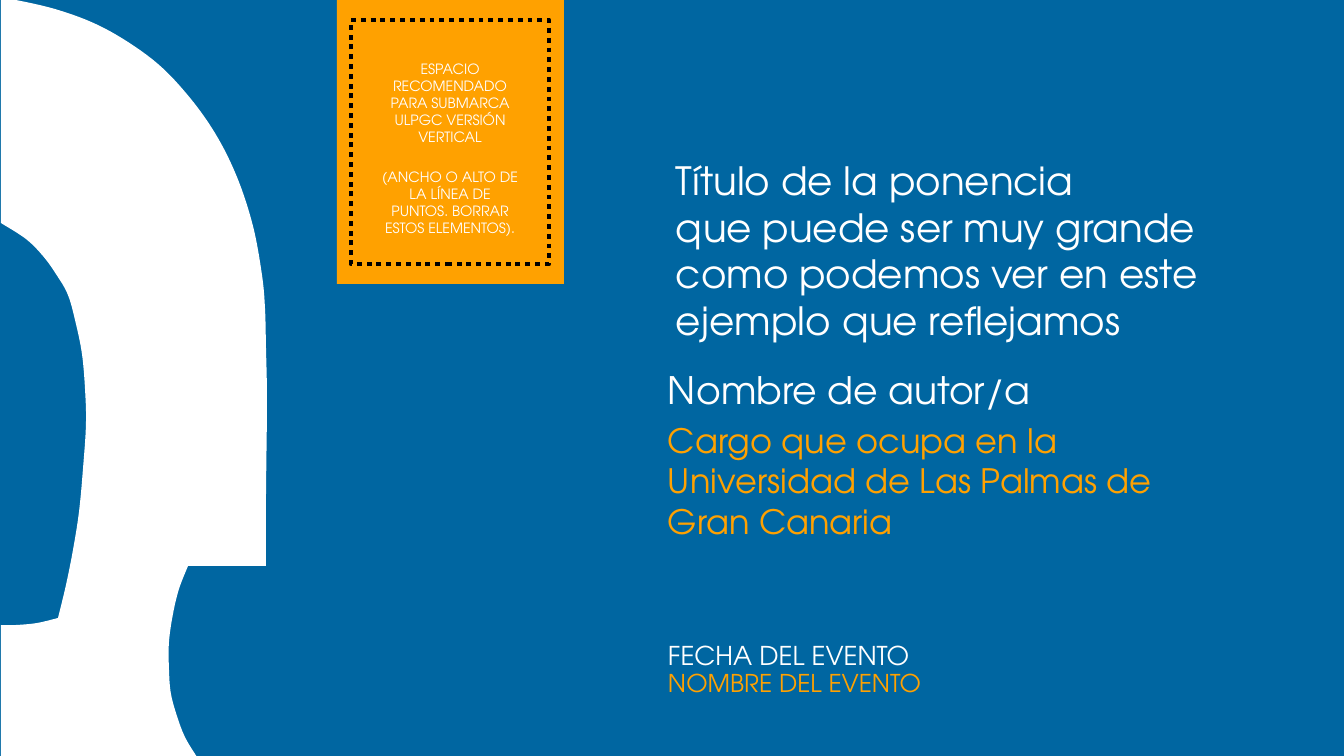
"""Build a cover slide for a university talk."""
from pptx import Presentation, util as u
from pptx.dml.color import RGBColor
from pptx.enum import dml, shapes, text

PX = 914400 / 50.4
FONT = "TeX Gyre Adventor"
BLUE = RGBColor(0x00, 0x66, 0xA1)
GOLD = RGBColor(0xFF, 0xA1, 0x00)
WHITE = RGBColor(0xFF, 0xFF, 0xFF)
BLACK = RGBColor(0x00, 0x00, 0x00)

BROW = [(1, -3), (55, 9), (104, 28), (152, 59), (186, 93), (215, 133),
        (237, 177), (253, 226), (262, 275), (265, 308), (266, 347),
        (267, 402), (266, 497), (266, 566)]
NECK = [(188, 566), (179, 589), (173, 614), (169, 642), (169, 669),
        (171, 694), (178, 719), (186, 739), (199, 760)]
BASE = [(1, 760), (1, 625)]
CHIN = [(1, 625), (16, 625), (37, 623), (58, 618)]
INNER = [(58, 618), (66, 585), (73, 550), (79, 512), (83, 469), (86, 424),
         (85, 388), (82, 354), (76, 324), (68, 295), (56, 274), (43, 256),
         (26, 239), (1, 223)]


def emu(n):
    return u.Emu(round(n * PX))


def blend(a, b, c, d, t):
    return (2 * b + (c - a) * t + (2 * a - 5 * b + 4 * c - d) * t ** 2
            + (3 * b - a - 3 * c + d) * t ** 3) / 2


def curve(knots, steps=8):
    ends = [knots[0], *knots, knots[-1]]
    dots = [knots[0]]
    for quad in zip(ends, ends[1:], ends[2:], ends[3:]):
        for i in range(1, steps + 1):
            dots.append(tuple(blend(*axis, i / steps) for axis in zip(*quad)))
    return dots


def paint(shape, fill=None, line=None, width=7):
    shape.shadow.inherit = False
    if fill is None:
        shape.fill.background()
    else:
        shape.fill.solid()
        shape.fill.fore_color.rgb = fill
    if line is None:
        shape.line.fill.background()
    else:
        shape.line.color.rgb = line
        shape.line.width = u.Pt(width)
        shape.line.dash_style = dml.MSO_LINE.ROUND_DOT


def add_rect(slide, area, **look):
    kind = shapes.MSO_SHAPE.RECTANGLE
    paint(slide.shapes.add_shape(kind, *map(emu, area)), **look)


def add_head(slide):
    dots = [p for part in (BROW, NECK, BASE, CHIN, INNER) for p in curve(part)]
    path = [(round(x * PX), round(y * PX)) for x, y in dots]
    build = slide.shapes.build_freeform(*path[0])
    build.add_line_segments(path[1:], close=True)
    paint(build.convert_to_shape(), fill=WHITE)


def add_text(slide, area, words, size, color=WHITE, align=text.PP_ALIGN.LEFT,
             anchor=text.MSO_ANCHOR.MIDDLE, gap=0):
    frame = slide.shapes.add_textbox(*map(emu, area)).text_frame
    frame.word_wrap = True
    frame.vertical_anchor = anchor
    frame.margin_left = frame.margin_right = emu(4)
    frame.margin_top = frame.margin_bottom = emu(4)
    frame.text = words
    for i, para in enumerate(frame.paragraphs):
        para.alignment = align
        if i and gap:
            para.space_before = u.Pt(gap)
        para.font.name = FONT
        para.font.size = u.Pt(size)
        para.font.color.rgb = color


def main():
    deck = Presentation()
    deck.slide_width, deck.slide_height = emu(1344), emu(756)
    slide = deck.slides.add_slide(deck.slide_layouts[6])
    slide.background.fill.solid()
    slide.background.fill.fore_color.rgb = BLUE

    add_rect(slide, (337, -1, 227, 285), fill=GOLD)
    add_text(slide, (672, 143, 600, 214),
             "Título de la ponencia\nque puede ser muy grande\n"
             "como podemos ver en este\nejemplo que reflejamos", 55.6)
    add_text(slide, (664, 363, 565, 53), "Nombre de autor/a", 54)
    add_text(slide, (664, 416, 565, 128),
             "Cargo que ocupa en la Universidad de Las Palmas de Gran Canaria",
             48, color=GOLD, anchor=text.MSO_ANCHOR.TOP)
    add_text(slide, (664, 636, 565, 39), "FECHA DEL EVENTO", 37)
    add_text(slide, (664, 664, 565, 37), "NOMBRE DEL EVENTO", 35, color=GOLD)
    add_rect(slide, (351, 20, 198, 244), line=BLACK)
    add_text(slide, (378, 52, 144, 192),
             "ESPACIO RECOMENDADO PARA SUBMARCA ULPGC VERSIÓN VERTICAL\n"
             "(ANCHO O ALTO DE LA LÍNEA DE PUNTOS. BORRAR ESTOS ELEMENTOS).",
             20.2, align=text.PP_ALIGN.CENTER, gap=33)
    add_head(slide)
    deck.save("out.pptx")


if __name__ == "__main__":
    main()
